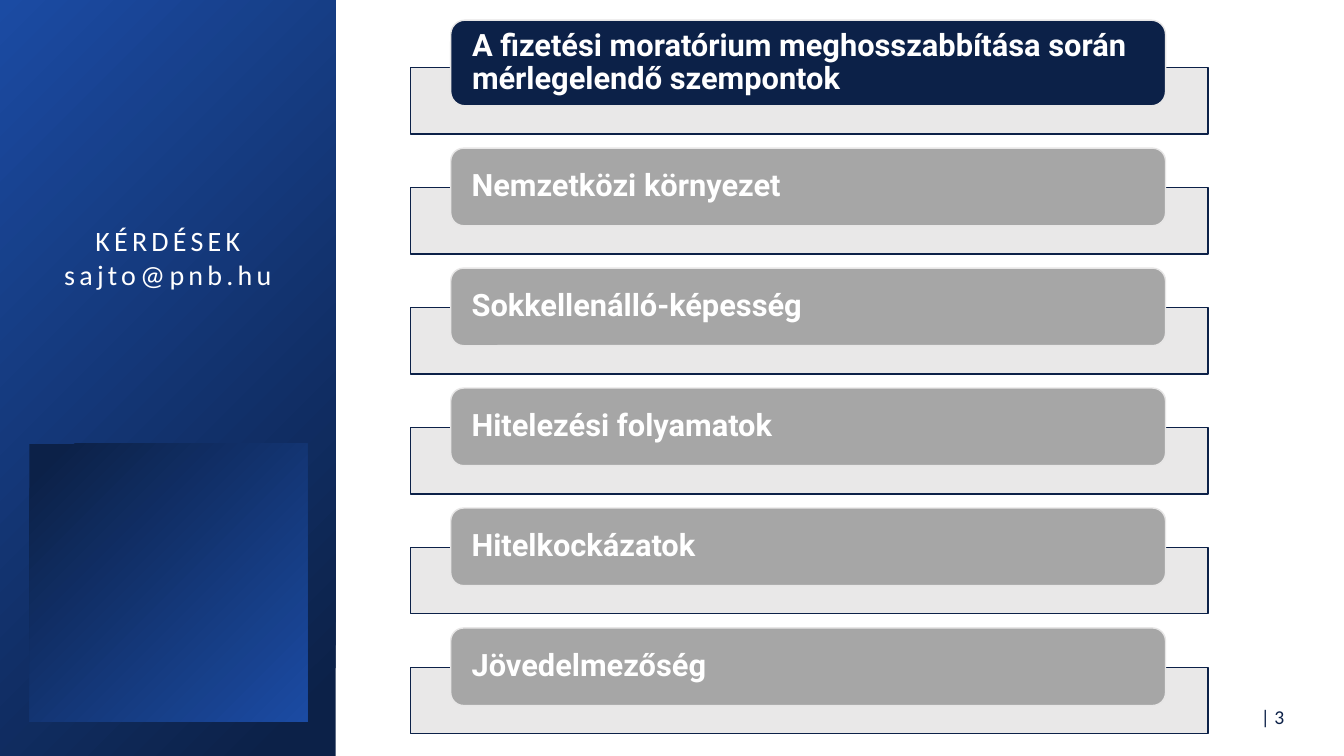
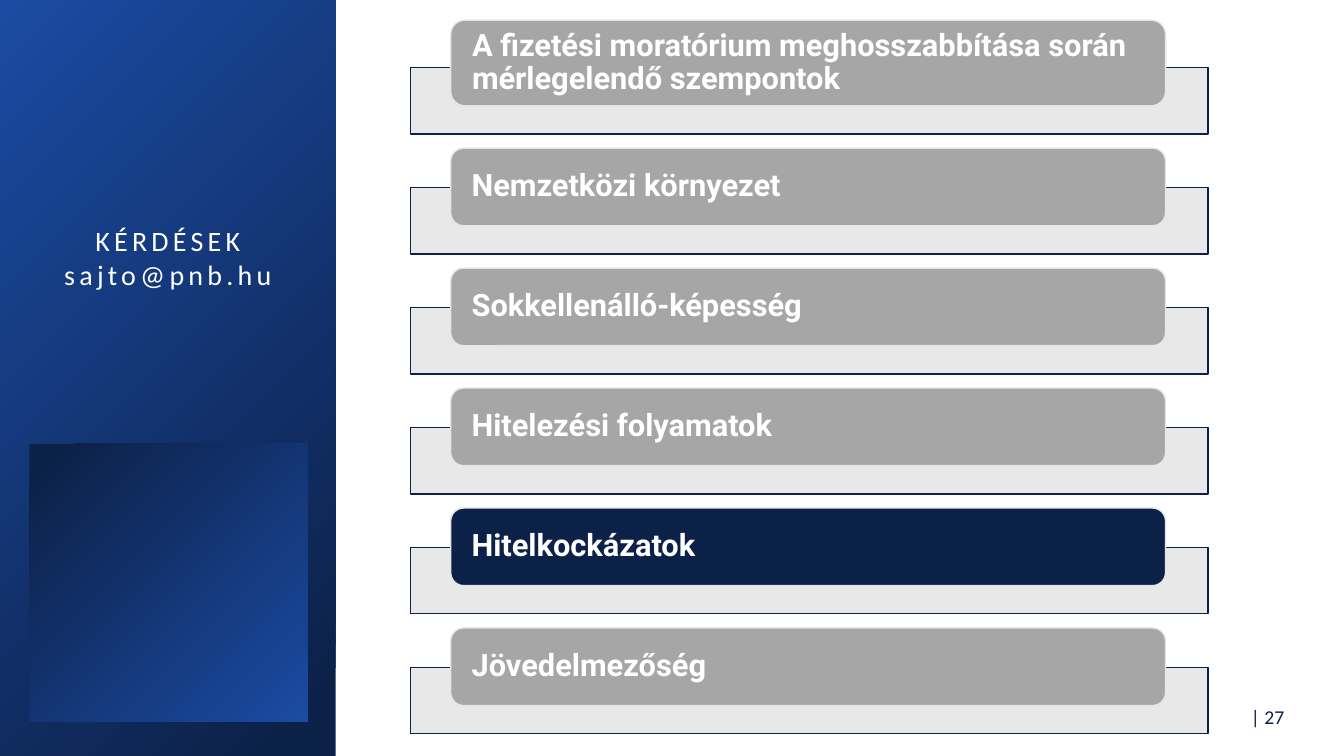
from pptx import Presentation
from pptx.dml.color import RGBColor
from pptx.enum.shapes import MSO_SHAPE
from pptx.enum.text import MSO_ANCHOR, PP_ALIGN
from pptx.oxml.ns import qn
from pptx.util import Inches, Pt
from lxml.etree import SubElement

# Content
TOPICS = [
    "A fizetési moratórium meghosszabbítása során mérlegelendő szempontok",
    "Nemzetközi környezet",
    "Sokkellenálló-képesség",
    "Hitelezési folyamatok",
    "Hitelkockázatok",
    "Jövedelmezőség",
]
CONTACT = ["KÉRDÉSEK", "sajto@pnb.hu"]
AGENDAS = [  # page number, highlighted topic
    (3, "A fizetési moratórium meghosszabbítása során mérlegelendő szempontok"),
    (27, "Hitelkockázatok"),
]

# Shared style
NAVY, BLUE, GREY, PALE, WHITE = "0C2148", "1B4BA3", "A6A6A6", "E7E6E6", "FFFFFF"
BODY_FONT, TOPIC_FONT = "Calibri", "Roboto"

# Agenda grid, in inches
BAR_LEFT, BAR_TOP, BAR_WIDTH, BAR_HEIGHT = 4.07, 0.67, 7.91, 0.66
TAB_LEFT, TAB_WIDTH, TAB_HEIGHT, TALL_TAB_HEIGHT = 4.47, 7.09, 0.77, 0.85
TAB_OVERLAP = 0.38
ROW_PITCH = 1.19


def color(hex_string):
    return RGBColor.from_string(hex_string)


def add_box(slide, kind, left, top, width, height):
    shape = slide.shapes.add_shape(
        kind, Inches(left), Inches(top), Inches(width), Inches(height))
    shape.shadow.inherit = False
    return shape


def add_filled_box(slide, kind, box, fill, line):
    shape = add_box(slide, kind, *box)
    shape.fill.solid()
    shape.fill.fore_color.rgb = color(fill)
    shape.line.color.rgb = color(line)
    shape.line.width = Pt(1)
    return shape


def add_gradient_box(slide, box, rotation=0):
    shape = add_box(slide, MSO_SHAPE.RECTANGLE, *box)
    shape.rotation = rotation
    shape.line.fill.background()
    shape.fill.gradient()
    shape.fill.gradient_angle = 135
    for stop, (position, shade) in zip(
            shape.fill.gradient_stops, [(0.06, NAVY), (1, BLUE)]):
        stop.position = position
        stop.color.rgb = color(shade)


def add_run(paragraph, text, size, font, shade, bold=False):
    run = paragraph.add_run()
    run.text = text
    run.font.size = Pt(size)
    run.font.name = font
    run.font.bold = bold
    run.font.color.rgb = color(shade)
    return run


def add_text_box(slide, left, top, width, height):
    box = slide.shapes.add_textbox(
        Inches(left), Inches(top), Inches(width), Inches(height))
    box.text_frame.word_wrap = True
    return box.text_frame


def add_side_panel(slide):
    add_gradient_box(slide, (0, 0, 3.33, 7.5))
    add_gradient_box(slide, (0.29, 4.4, 2.76, 2.76), rotation=180)
    frame = add_text_box(slide, 0.4, 2.17, 2.53, 0.77)
    for index, line in enumerate(CONTACT):
        paragraph = frame.add_paragraph() if index else frame.paragraphs[0]
        paragraph.alignment = PP_ALIGN.CENTER
        run = add_run(paragraph, line, 20, BODY_FONT, WHITE)
        run.font._element.set("spc", "300")  # letter spacing of 3 pt


def add_page_number(slide, number):
    frame = add_text_box(slide, 12.19, 6.9, 0.69, 0.41)
    frame.vertical_anchor = MSO_ANCHOR.MIDDLE
    paragraph = frame.paragraphs[0]
    paragraph.alignment = PP_ALIGN.RIGHT
    add_run(paragraph, f"| {number} ", 14, BODY_FONT, NAVY)


def add_topic(slide, row, topic, highlighted):
    # Translucent bar behind the tab
    bar_top = BAR_TOP + row * ROW_PITCH
    bar = add_filled_box(slide, MSO_SHAPE.RECTANGLE,
                         (BAR_LEFT, bar_top, BAR_WIDTH, BAR_HEIGHT), PALE, NAVY)
    bar_color = bar.fill._xPr.find(qn("a:solidFill"))[0]
    SubElement(bar_color, qn("a:alpha")).set("val", "90000")

    # Rounded tab with the topic; the two-line one is taller
    height = TAB_HEIGHT if row else TALL_TAB_HEIGHT
    tab_top = bar_top + TAB_OVERLAP - height
    tab = add_filled_box(slide, MSO_SHAPE.ROUNDED_RECTANGLE,
                         (TAB_LEFT, tab_top, TAB_WIDTH, height),
                         NAVY if highlighted else GREY, PALE)
    frame = tab.text_frame
    frame.word_wrap = True
    frame.vertical_anchor = MSO_ANCHOR.MIDDLE
    frame.margin_left = frame.margin_right = Inches(0.17)
    frame.margin_top = frame.margin_bottom = 0
    paragraph = frame.paragraphs[0]
    paragraph.alignment = PP_ALIGN.LEFT
    paragraph.line_spacing = 0.9
    add_run(paragraph, topic, 22, TOPIC_FONT, WHITE, bold=True)


def main():
    presentation = Presentation()
    presentation.slide_width = Inches(13.33)
    presentation.slide_height = Inches(7.5)
    blank_layout = presentation.slide_layouts[6]
    for number, current_topic in AGENDAS:
        slide = presentation.slides.add_slide(blank_layout)
        add_side_panel(slide)
        add_page_number(slide, number)
        for row, topic in enumerate(TOPICS):
            add_topic(slide, row, topic, topic == current_topic)
    presentation.save("out.pptx")


if __name__ == "__main__":
    main()
